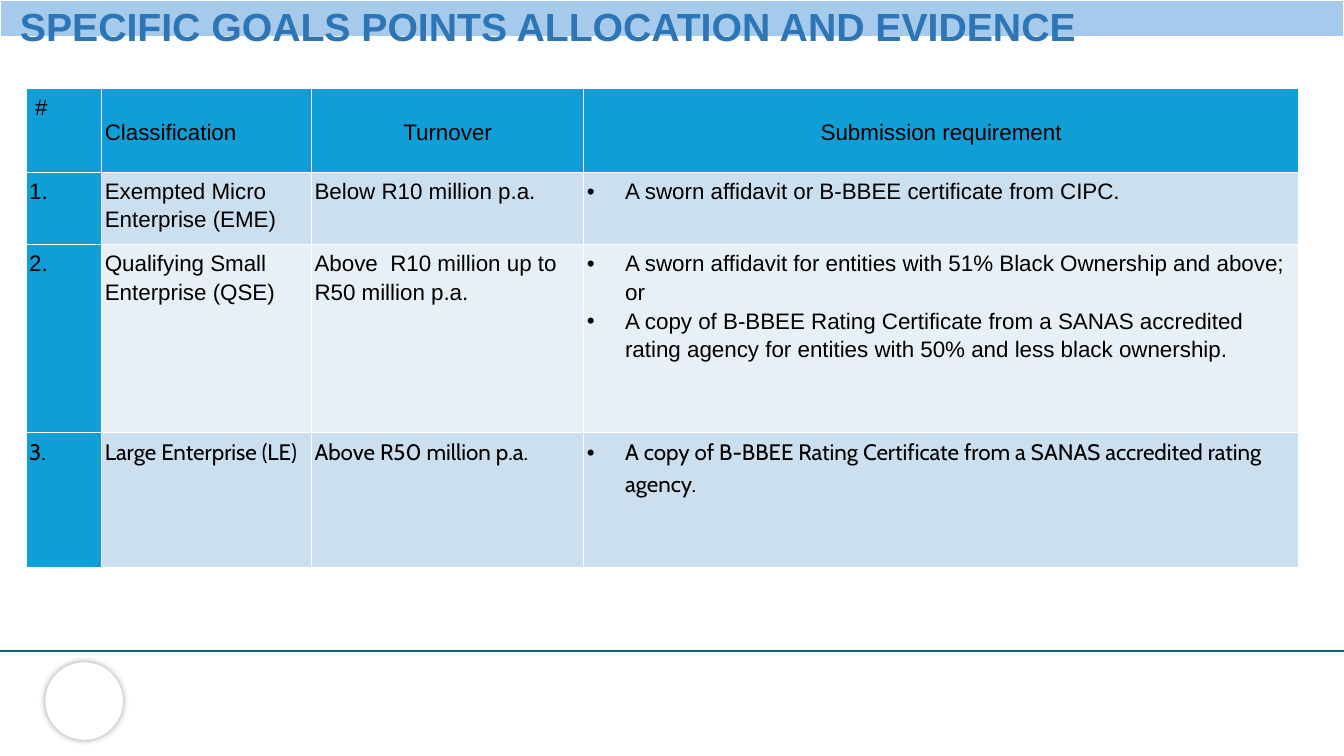
from lxml.etree import SubElement
from pptx import Presentation
from pptx.dml.color import RGBColor
from pptx.enum.shapes import MSO_CONNECTOR, MSO_SHAPE
from pptx.enum.text import MSO_ANCHOR, PP_ALIGN
from pptx.oxml import parse_xml
from pptx.oxml.ns import nsdecls, qn
from pptx.util import Inches, Pt

# Content
TITLE = "SPECIFIC GOALS POINTS ALLOCATION AND EVIDENCE"
HEADERS = ["#", "Classification", "Turnover", "Submission requirement"]
ENTERPRISES = [
    ("1.", "Exempted Micro Enterprise (EME)", "Below R10 million p.a.",
     ["A sworn affidavit or B-BBEE certificate from CIPC."]),
    ("2.", "Qualifying Small Enterprise (QSE)",
     "Above  R10 million up to R50 million p.a.",
     ["A sworn affidavit for entities with 51% Black Ownership and above; or",
      "A copy of B-BBEE Rating Certificate from a SANAS accredited rating "
      "agency for entities with 50% and less black ownership."]),
    ("3.", "Large Enterprise (LE)", "Above R50 million p.a.",
     ["A copy of B-BBEE Rating Certificate from a SANAS accredited rating agency."]),
]

# Format values
WHITE = RGBColor(0xFF, 0xFF, 0xFF)
BLACK = RGBColor(0x00, 0x00, 0x00)
BAND_BLUE = RGBColor(0xA6, 0xCA, 0xEC)
TITLE_BLUE = RGBColor(0x2E, 0x75, 0xB6)
RULE_BLUE = RGBColor(0x15, 0x60, 0x82)
HEADER_BLUE = RGBColor(0x0F, 0x9E, 0xD5)
ROW_FILLS = [RGBColor(0xCC, 0xDF, 0xEF), RGBColor(0xE7, 0xF0, 0xF7)]
SLIDE_WIDTH, SLIDE_HEIGHT = 13.33, 7.5
COLUMN_WIDTHS = [0.75, 2.08, 2.7, 7.09]
ROW_HEIGHTS = [0.83, 0.72, 1.86, 1.34]
ROW_FONTS = ["Arial", "Arial", "Arial", "Cabin"]
CELL_MARGINS = {"margin_left": 0.03, "margin_right": 0.03,
                "margin_top": 0.03, "margin_bottom": 0.02}
BULLET_INDENT = Inches(0.38)


def set_attributes(target, values):
    for name, value in values.items():
        setattr(target, name, value)


def write_text(paragraph, text, color, **font_values):
    run = paragraph.add_run()
    run.text = text
    set_attributes(run.font, font_values)
    run.font.color.rgb = color


def add_bullet(paragraph):
    properties = paragraph._p.get_or_add_pPr()
    properties.set("marL", str(BULLET_INDENT))
    properties.set("indent", str(-BULLET_INDENT))
    SubElement(properties, qn("a:buFont")).set("typeface", "Arial")
    SubElement(properties, qn("a:buChar")).set("char", "•")


def add_borders(cell):
    properties = cell._tc.get_or_add_tcPr()
    for side in ("L", "R", "T", "B"):
        properties.append(parse_xml(
            f'<a:ln{side} {nsdecls("a")} w="{Pt(1)}"><a:solidFill>'
            f'<a:srgbClr val="{WHITE}"/></a:solidFill></a:ln{side}>'))


def fill_cell(cell, color):
    cell.fill.solid()
    cell.fill.fore_color.rgb = color


def add_plain_table(slide, left, top, widths, heights):
    frame = slide.shapes.add_table(
        len(heights), len(widths), Inches(left), Inches(top),
        Inches(sum(widths)), Inches(sum(heights)))
    table = frame.table
    set_attributes(table, {"first_row": False, "horz_banding": False})
    for column, width in zip(table.columns, widths):
        column.width = Inches(width)
    for row, height in zip(table.rows, heights):
        row.height = Inches(height)
    return table


presentation = Presentation()
presentation.slide_width = Inches(SLIDE_WIDTH)
presentation.slide_height = Inches(SLIDE_HEIGHT)
slide = presentation.slides.add_slide(presentation.slide_layouts[6])

# Footer rule and disc
rule = slide.shapes.add_connector(
    MSO_CONNECTOR.STRAIGHT, Inches(SLIDE_WIDTH), Inches(6.46), 0, Inches(6.46))
rule.line.color.rgb = RULE_BLUE
rule.line.width = Pt(1.5)
SubElement(rule._element.spPr, qn("a:effectLst"))

disc = slide.shapes.add_shape(
    MSO_SHAPE.OVAL, Inches(0.45), Inches(6.57), Inches(0.77), Inches(0.77))
disc.fill.solid()
disc.fill.fore_color.rgb = WHITE
disc.line.fill.background()
disc._element.spPr.append(parse_xml(
    f'<a:effectLst {nsdecls("a")}><a:outerShdw blurRad="{Pt(5)}" dist="0" dir="0">'
    f'<a:srgbClr val="{BLACK}"><a:alpha val="40000"/></a:srgbClr>'
    '</a:outerShdw></a:effectLst>'))

# Title band
band = add_plain_table(slide, 0, 0, [SLIDE_WIDTH], [0.36]).cell(0, 0)
set_attributes(band, {name: 0 for name in CELL_MARGINS})
add_borders(band)
fill_cell(band, BAND_BLUE)
SubElement(band.text_frame.paragraphs[0]._p, qn("a:endParaRPr")).set("sz", "800")

# Title
title_box = slide.shapes.add_textbox(Inches(0.1), 0, Inches(10.87), Inches(0.88))
title_frame = title_box.text_frame
set_attributes(title_frame, {"word_wrap": True, "margin_top": Inches(0.08)})
title = title_frame.paragraphs[0]
title.line_spacing = 0.9
write_text(title, TITLE, TITLE_BLUE, name="Arial", size=Pt(28), bold=True)

# Classification table
table = add_plain_table(slide, 0.26, 0.88, COLUMN_WIDTHS, ROW_HEIGHTS)
for row_index, record in enumerate([HEADERS, *ENTERPRISES]):
    for column_index, content in enumerate(record):
        cell = table.cell(row_index, column_index)
        is_header = row_index == 0
        is_bulleted = isinstance(content, list)
        set_attributes(cell, {name: Inches(value)
                              for name, value in CELL_MARGINS.items()})
        add_borders(cell)
        fill_cell(cell, HEADER_BLUE if is_header or column_index == 0
                  else ROW_FILLS[(row_index - 1) % 2])
        if is_header and column_index == 0:
            cell.margin_left = Inches(0.09)
        elif is_header:
            cell.vertical_anchor = MSO_ANCHOR.MIDDLE

        for index, text in enumerate(content if is_bulleted else [content]):
            frame = cell.text_frame
            paragraph = frame.add_paragraph() if index else frame.paragraphs[0]
            paragraph.line_spacing = 1.15
            if is_bulleted:
                add_bullet(paragraph)
            if is_header and column_index >= 2:
                paragraph.alignment = PP_ALIGN.CENTER
            write_text(paragraph, text, BLACK,
                       name=ROW_FONTS[row_index], size=Pt(16))

presentation.save("out.pptx")
